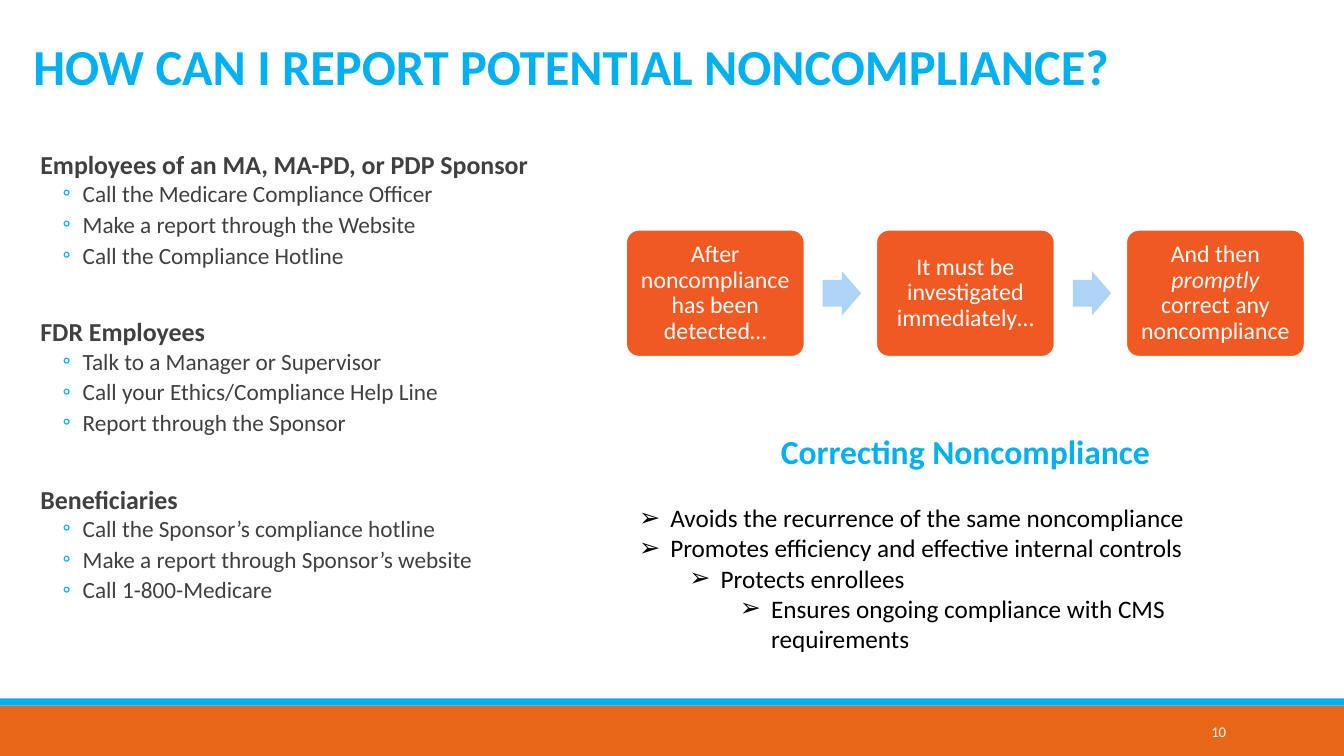
"""Build the slide on reporting and correcting noncompliance."""
from lxml.etree import SubElement
from pptx import Presentation
from pptx.dml.color import RGBColor
from pptx.enum.shapes import MSO_SHAPE
from pptx.enum.text import MSO_ANCHOR, MSO_AUTO_SIZE, PP_ALIGN
from pptx.oxml.ns import qn
from pptx.util import Inches, Pt

BLUE = RGBColor(0x00, 0xB0, 0xF0)
FOOTER_ORANGE = RGBColor(0xE7, 0x66, 0x18)
STEP_ORANGE = RGBColor(0xF1, 0x59, 0x22)
PALE_BLUE = RGBColor(0xAB, 0xD4, 0xF6)
GREY = RGBColor(0x40, 0x40, 0x40)
BLACK = RGBColor(0, 0, 0)
WHITE = RGBColor(0xFF, 0xFF, 0xFF)

CHANNELS = [
    ("Employees of an MA, MA-PD, or PDP Sponsor",
     ["Call the Medicare Compliance Officer",
      "Make a report through the Website",
      "Call the Compliance Hotline"]),
    ("FDR Employees",
     ["Talk to a Manager or Supervisor",
      "Call your Ethics/Compliance Help Line",
      "Report through the Sponsor"]),
    ("Beneficiaries",
     ["Call the Sponsor’s compliance hotline",
      "Make a report through Sponsor’s website",
      "Call 1-800-Medicare"]),
]
STEPS = [
    ["After noncompliance has been detected…"],
    ["It must be investigated immediately…"],
    ["And then ", "promptly", " correct any noncompliance"],
]
BENEFITS = [
    (0, "Avoids the recurrence of the same noncompliance"),
    (0, "Promotes efficiency and effective internal controls"),
    (1, "Protects enrollees"),
    (2, "Ensures ongoing compliance with CMS requirements"),
]


class SlideBuilder:
    """Hold the font and the current slide, and add styled elements."""

    def __init__(self, slide, font_name):
        self.slide = slide
        self.font_name = font_name

    def frame(self, holder, box, anchor=MSO_ANCHOR.TOP):
        """Place a text holder and return its emptied text frame."""
        holder.left, holder.top, holder.width, holder.height = map(Inches, box)
        frame = holder.text_frame
        frame.word_wrap = True
        frame.auto_size = MSO_AUTO_SIZE.NONE
        frame.vertical_anchor = anchor
        return frame

    def text_box(self, box, anchor=MSO_ANCHOR.TOP):
        """Add a text box and return its text frame."""
        return self.frame(self.slide.shapes.add_textbox(*map(Inches, box)), box, anchor)

    def paragraph(self, frame, runs, size, color, bold=False, align=PP_ALIGN.LEFT,
                  spacing=1.0, before=0, after=0, level=0, indent=0, hang=0,
                  bullet=None):
        """Write a paragraph, with every second run in italics."""
        first = frame.paragraphs[0]
        paragraph = frame.add_paragraph() if first.runs else first
        for position, words in enumerate(runs):
            run = paragraph.add_run()
            run.text = words
            if position % 2:
                run.font.italic = True
        paragraph.level = level
        paragraph.alignment = align
        paragraph.line_spacing = spacing
        paragraph.space_before, paragraph.space_after = Pt(before), Pt(after)
        self.bullet(paragraph, bullet, indent, hang)
        font = paragraph.font
        font.name, font.size, font.bold = self.font_name, Pt(size), bold
        font.color.rgb = color

    def bullet(self, paragraph, bullet, indent, hang):
        """Set the indents and the coloured bullet of a paragraph."""
        properties = paragraph._p.get_or_add_pPr()
        properties.set("marL", str(Inches(indent)))
        properties.set("indent", str(Inches(-hang)))
        if bullet is None:
            SubElement(properties, qn("a:buNone"))
            return
        symbol, color = bullet
        tint = SubElement(properties, qn("a:buClr"))
        SubElement(tint, qn("a:srgbClr")).set("val", str(color))
        SubElement(properties, qn("a:buFont")).set("typeface", self.font_name)
        SubElement(properties, qn("a:buChar")).set("char", symbol)

    def block(self, kind, box, fill, line=None, adjustments=()):
        """Add a filled preset shape."""
        shape = self.slide.shapes.add_shape(kind, *map(Inches, box))
        shape.shadow.inherit = False
        for position, value in enumerate(adjustments):
            shape.adjustments[position] = value
        shape.fill.solid()
        shape.fill.fore_color.rgb = fill
        if line is None:
            shape.line.fill.background()
        else:
            shape.line.color.rgb = line
            shape.line.width = Pt(1.25)
        return shape

    def step(self, left, runs):
        """Add one rounded step of the process with its text."""
        box = (left, 2.28, 1.77, 1.26)
        card = self.block(MSO_SHAPE.ROUNDED_RECTANGLE, box, STEP_ORANGE, WHITE, [0.1])
        frame = self.frame(card, box, MSO_ANCHOR.MIDDLE)
        frame.margin_left = frame.margin_right = Inches(0.07)
        frame.margin_top = frame.margin_bottom = Inches(0.07)
        self.paragraph(frame, runs, 17, WHITE, align=PP_ALIGN.CENTER, spacing=0.9)


def main():
    """Build and save the slide."""
    deck = Presentation()
    deck.slide_width, deck.slide_height = Inches(13.33), Inches(7.5)
    slide = deck.slides.add_slide(deck.slide_layouts[1])
    builder = SlideBuilder(slide, "Calibri")

    builder.block(MSO_SHAPE.RECTANGLE, (0, 7, 13.33, 0.5), FOOTER_ORANGE)
    builder.block(MSO_SHAPE.RECTANGLE, (0, 6.93, 13.33, 0.07), BLUE)

    title = builder.frame(slide.shapes.title, (0.23, 0.3, 12.05, 0.71))
    builder.paragraph(title, ["HOW CAN I REPORT POTENTIAL NONCOMPLIANCE?"], 36, BLUE,
                      bold=True)

    channels = builder.frame(slide.placeholders[1], (0.3, 1.48, 5.33, 5.08))
    for position, (audience, actions) in enumerate(CHANNELS):
        builder.paragraph(channels, [audience], 18.5, GREY, bold=True, spacing=0.8,
                          before=34 if position else 0, after=2)
        for action in actions:
            builder.paragraph(channels, [action], 16.6, GREY, spacing=0.8, before=2,
                              after=4, level=1, indent=0.42, hang=0.2,
                              bullet=("◦", BLUE))

    for position, runs in enumerate(STEPS):
        left = 6.21 + 2.48 * position
        if position:
            builder.block(MSO_SHAPE.RIGHT_ARROW, (left - 0.53, 2.69, 0.38, 0.44),
                          PALE_BLUE, adjustments=[0.6, 0.5])
        builder.step(left, runs)

    benefits = builder.text_box((6.24, 4.23, 6.67, 2.32))
    builder.paragraph(benefits, ["Correcting Noncompliance"], 24, BLUE, bold=True,
                      align=PP_ALIGN.CENTER, after=22)
    for level, benefit in BENEFITS:
        builder.paragraph(benefits, [benefit], 18, BLACK, level=level,
                          indent=0.31 + 0.5 * level, hang=0.31, bullet=("➢", BLACK))

    page_number = builder.text_box((10.83, 7.06, 1.43, 0.4), MSO_ANCHOR.MIDDLE)
    builder.paragraph(page_number, ["10"], 10.5, WHITE, align=PP_ALIGN.RIGHT)

    deck.save("out.pptx")


if __name__ == "__main__":
    main()
